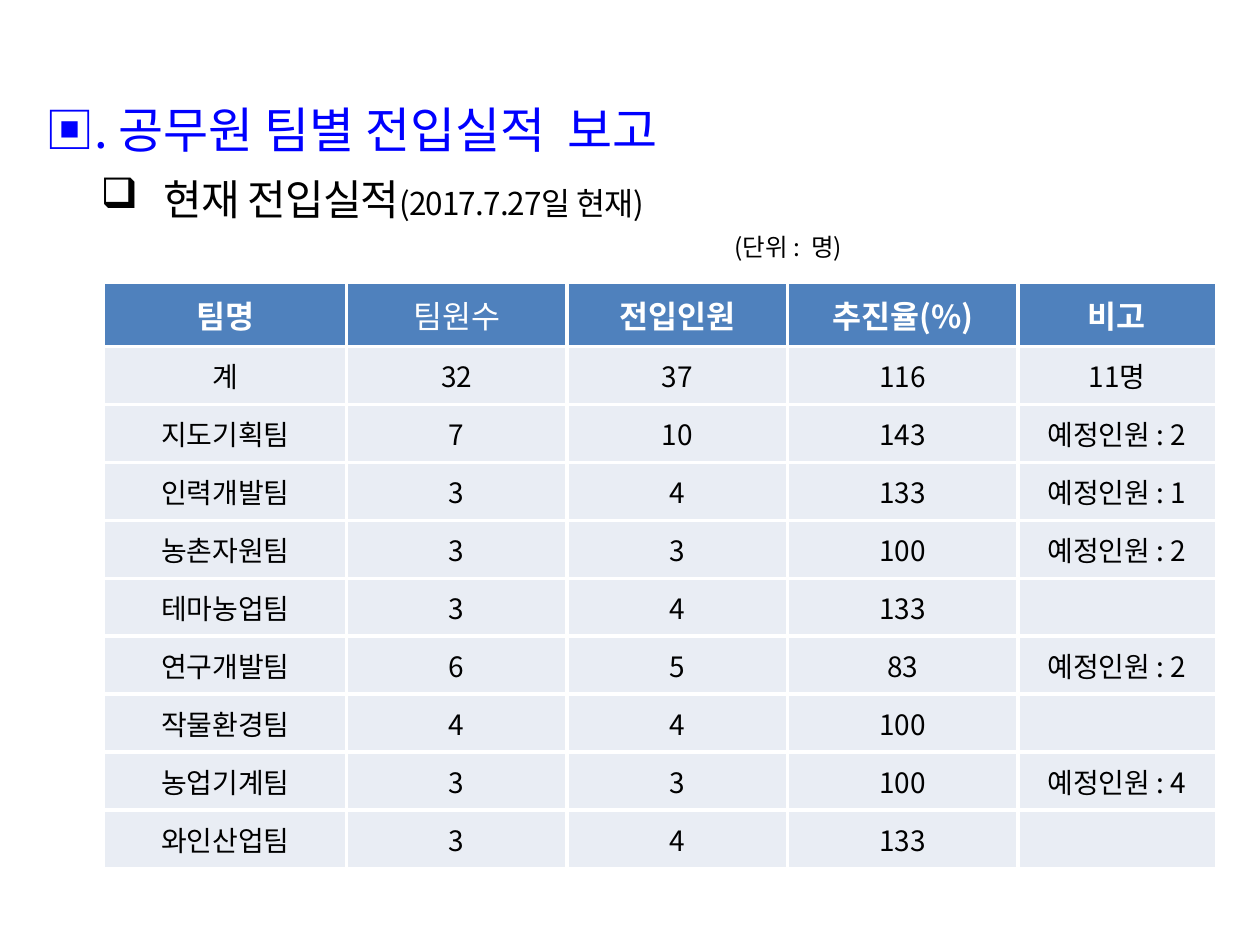
from lxml import etree
from pptx import Presentation
from pptx.dml.color import RGBColor
from pptx.enum.text import MSO_ANCHOR, PP_ALIGN
from pptx.oxml.ns import qn
from pptx.util import Inches, Pt

CENTER, MIDDLE = PP_ALIGN.CENTER, MSO_ANCHOR.MIDDLE
FONT = "Noto Sans CJK KR"
BLUE = RGBColor(0x00, 0x00, 0xFF)
BLACK = RGBColor(0x00, 0x00, 0x00)
WHITE = RGBColor(0xFF, 0xFF, 0xFF)
HEADER_FILL = RGBColor(0x4F, 0x81, 0xBD)
BODY_FILL = RGBColor(0xE9, 0xED, 0xF4)

# Content
TITLE = "▣. 공무원 팀별 전입실적  보고"
SUBTITLE, AS_OF = "현재 전입실적", "(2017.7.27일 현재)"
UNIT = "(단위 :  명)"
HEADERS = ["팀명", "팀원수", "전입인원", "추진율(%)", "비고"]
PLAIN_HEADER = "팀원수"
TEAMS = [
    ("계", 32, 37, 116, "11명"),
    ("지도기획팀", 7, 10, 143, "예정인원 : 2"),
    ("인력개발팀", 3, 4, 133, "예정인원 : 1"),
    ("농촌자원팀", 3, 3, 100, "예정인원 : 2"),
    ("테마농업팀", 3, 4, 133, ""),
    ("연구개발팀", 6, 5, 83, "예정인원 : 2"),
    ("작물환경팀", 4, 4, 100, ""),
    ("농업기계팀", 3, 3, 100, "예정인원 : 4"),
    ("와인산업팀", 3, 4, 133, ""),
]
COLUMN_WIDTHS = [1.92, 1.75, 1.75, 1.83, 1.57]
HEADER_HEIGHT, ROW_HEIGHT = 0.5, 0.46


def set_font(font, props, size, color, bold=False):
    font.name, font.size, font.bold = FONT, Pt(size), bold
    font.color.rgb = color
    etree.SubElement(props, qn("a:ea"), typeface=FONT)


def style_paragraph(para, size, color, bold=False):
    font = para.font
    set_font(font, para._p.pPr.find(qn("a:defRPr")), size, color, bold)


def add_heading(para, texts, color, left, hanging=0.0, bullet=None):
    """Write (text, size, letter spacing) runs in an indented line."""
    para.line_spacing = 1.3
    props = para._p.get_or_add_pPr()
    props.set("marL", str(Inches(left)))
    props.set("indent", str(Inches(-hanging)))
    if bullet:
        etree.SubElement(props, qn("a:buChar"), char=bullet)
    for text, size, spacing in texts:
        span = para.add_run()
        span.text = text
        run_props = span._r.get_or_add_rPr()
        set_font(span.font, run_props, size, color)
        run_props.set("spc", str(int(spacing * 100)))


def add_border(cell, side, width):
    line = etree.SubElement(cell._tc.get_or_add_tcPr(), qn(f"a:ln{side}"), w=str(Pt(width)))
    fill = etree.SubElement(line, qn("a:solidFill"))
    etree.SubElement(fill, qn("a:srgbClr"), val=str(WHITE))


deck = Presentation()
deck.slide_width, deck.slide_height = Inches(10), Inches(7.5)
page = deck.slides.add_slide(deck.slide_layouts[6])

# Headings
box = page.shapes.add_textbox(Inches(0.2), Inches(0.6), Inches(9.8), Inches(1.6))
frame = box.text_frame
frame.word_wrap = True
title = frame.paragraphs[0]
add_heading(title, [(TITLE, 28, 0)], BLUE, 0.56, 0.5)
title.space_before = Pt(5.6)
add_heading(frame.add_paragraph(), [(SUBTITLE, 24, -0.5), (AS_OF, 18, -0.5)],
            BLACK, 1, 0.5, "❑")
add_heading(frame.add_paragraph(), [(UNIT, 14, 0)], BLACK, 5.53)

# Team table
rows = [HEADERS] + TEAMS
heights = [HEADER_HEIGHT] + [ROW_HEIGHT] * len(TEAMS)
table = page.shapes.add_table(
    len(rows), len(HEADERS), Inches(0.83), Inches(2.25),
    Inches(sum(COLUMN_WIDTHS)), Inches(sum(heights))).table
for column, width in zip(table.columns, COLUMN_WIDTHS):
    column.width = Inches(width)
last_row, last_column = len(rows) - 1, len(HEADERS) - 1

for r, values in enumerate(rows):
    table.rows[r].height = Inches(heights[r])
    is_header = r == 0
    for c, value in enumerate(values):
        cell = table.cell(r, c)
        cell.vertical_anchor = MIDDLE
        # Outer edges are thin, inner ones thick
        outer = {"L": c == 0, "R": c == last_column, "T": r == 0, "B": r == last_row}
        for side, is_outer in outer.items():
            add_border(cell, side, 1 if is_outer else 2.25)
        cell.fill.solid()
        cell.fill.fore_color.rgb = HEADER_FILL if is_header else BODY_FILL
        para = cell.text_frame.paragraphs[0]
        para.alignment = CENTER
        if is_header:
            style_paragraph(para, 18, WHITE, value != PLAIN_HEADER)
        else:
            style_paragraph(para, 16, BLACK)
        if value != "":
            para.add_run().text = str(value)

deck.save("out.pptx")
